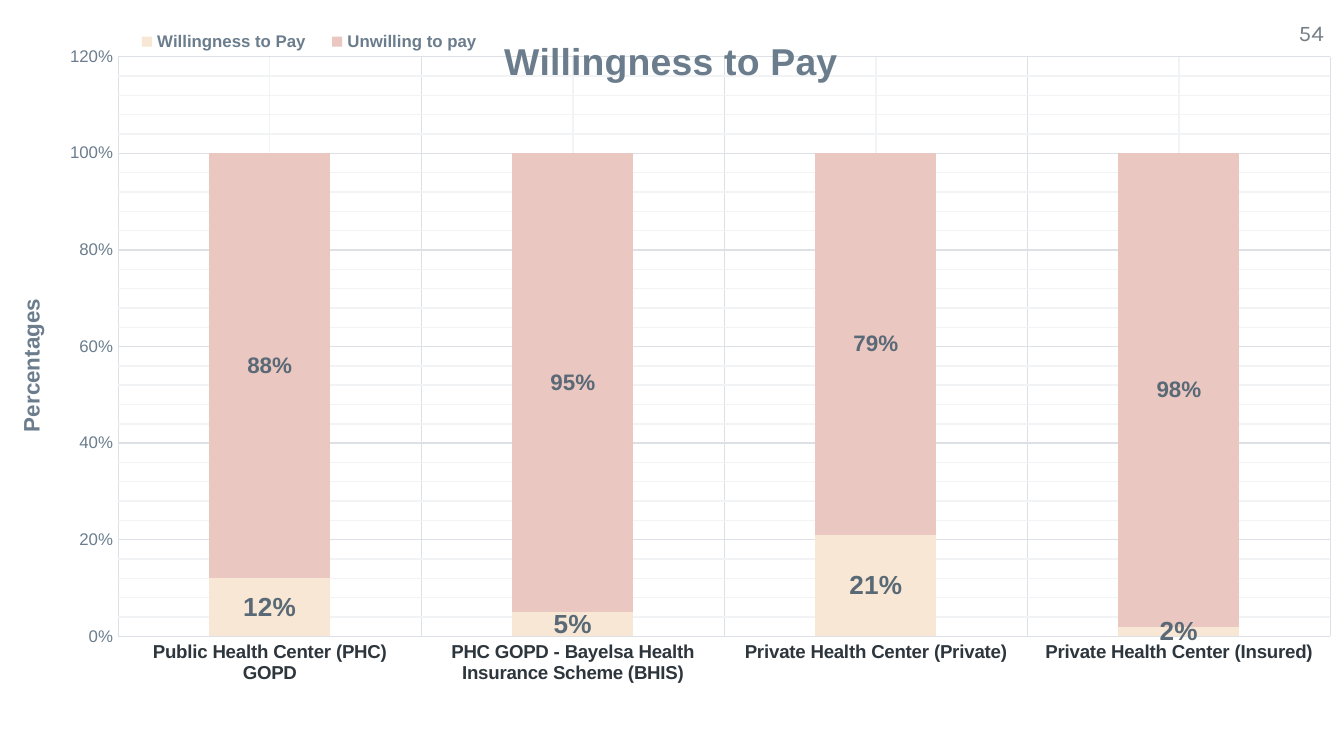
from pptx import Presentation
from pptx.chart.data import CategoryChartData
from pptx.dml.color import RGBColor
from pptx.enum.chart import (XL_CHART_TYPE, XL_LABEL_POSITION,
                             XL_LEGEND_POSITION, XL_TICK_MARK)
from pptx.enum.text import PP_ALIGN
from pptx.oxml import parse_xml
from pptx.oxml.ns import nsdecls, qn
from pptx.util import Pt

INK = RGBColor(0x2E, 0x36, 0x3D)
SLATE = RGBColor(0x6B, 0x7D, 0x8D)
LABEL = RGBColor(0x59, 0x69, 0x76)
NUMBER = RGBColor(0x76, 0x7E, 0x85)
GRID = RGBColor(0xDD, 0xE1, 0xE5)
MINOR_GRID = RGBColor(0xF2, 0xF3, 0xF5)
CREAM = RGBColor(0xF8, 0xE7, 0xD5)
ROSE = RGBColor(0xEB, 0xC7, 0xC1)

WIDTH, HEIGHT = Pt(720), Pt(405)
CATEGORIES = ["Public Health Center (PHC) GOPD",
              "PHC GOPD - Bayelsa Health Insurance Scheme (BHIS)",
              "Private Health Center (Private)",
              "Private Health Center (Insured)"]
# name, values, fill, label size
SERIES = [("Willingness to Pay", [0.12, 0.05, 0.21, 0.02], CREAM, 14),
          ("Unwilling to pay", [0.88, 0.95, 0.79, 0.98], ROSE, 12)]


def style_font(font, size, color, bold=False, name="Arial"):
    font.size = Pt(size)
    font.bold = bold
    font.name = name
    font.color.rgb = color


def write_text(frame, text, align=None, **style):
    para = frame.paragraphs[0]
    para.alignment = align
    span = para.add_run()
    span.text = text
    style_font(span.font, **style)


def add_page_number(page):
    box = page.shapes.add_textbox(Pt(666), Pt(10), Pt(43.2), Pt(31))
    frame = box.text_frame
    frame.word_wrap = True
    frame.margin_left = frame.margin_right = 0
    frame.margin_top = frame.margin_bottom = 0
    write_text(frame, "54", align=PP_ALIGN.RIGHT, size=12, color=NUMBER,
               name="Karla")


def place(element, index, x, y, width=None, height=None, inner=False):
    """Set a manual layout, as fractions of the chart, at a child index."""
    old = element.find(qn("c:layout"))
    if old is not None:
        element.remove(old)
    parts = '<c:layoutTarget val="inner"/>' if inner else ""
    parts += '<c:xMode val="edge"/><c:yMode val="edge"/>'
    for tag, value in zip("xywh", (x, y, width, height)):
        if value is not None:
            parts += f'<c:{tag} val="{value}"/>'
    element.insert(index, parse_xml(
        f'<c:layout {nsdecls("c")}><c:manualLayout>{parts}'
        '</c:manualLayout></c:layout>'))


def style_axis(axis, size, color, bold=False):
    style_font(axis.tick_labels.font, size, color, bold)
    axis.major_tick_mark = axis.minor_tick_mark = XL_TICK_MARK.NONE
    axis.has_major_gridlines = axis.has_minor_gridlines = True
    line = axis.major_gridlines.format.line
    line.color.rgb, line.width = GRID, Pt(0.75)
    minor = axis._element.find(qn("c:minorGridlines"))
    minor.append(parse_xml(
        f'<c:spPr {nsdecls("c", "a")}><a:ln w="{Pt(0.75)}"><a:solidFill>'
        f'<a:srgbClr val="{MINOR_GRID}"/></a:solidFill></a:ln></c:spPr>'))


def style_series(series, fill, size):
    series.format.fill.solid()
    series.format.fill.fore_color.rgb = fill
    labels = series.data_labels
    labels.show_value = True
    labels.position = XL_LABEL_POSITION.CENTER
    labels.number_format = "0%"
    labels.number_format_is_linked = False
    style_font(labels.font, size, LABEL, bold=True)


def style_titles(chart):
    title = chart.chart_title
    write_text(title.text_frame, "Willingness to Pay", size=20, color=SLATE,
               bold=True)
    place(title._element, 1, 0.37, 0.04)
    title._element.find(qn("c:overlay")).set("val", "1")
    axis_title = chart.value_axis.axis_title
    write_text(axis_title.text_frame, "Percentages", size=12, color=SLATE,
               bold=True)
    axis_title.text_frame._txBody.bodyPr.set("rot", "-5400000")
    place(axis_title._element, 1, 0.01, 0.39)


def add_payment_chart(page):
    data = CategoryChartData(number_format="0%")
    data.categories = CATEGORIES
    for name, values, _, _ in SERIES:
        data.add_series(name, values)
    chart = page.shapes.add_chart(XL_CHART_TYPE.COLUMN_STACKED, 0, 0,
                                  WIDTH, HEIGHT, data).chart
    style_font(chart.font, 10, INK)
    plot = chart.plots[0]
    plot.gap_width, plot.overlap = 150, 100
    plot.vary_by_categories = False
    for series, (_, _, fill, size) in zip(plot.series, SERIES):
        style_series(series, fill, size)

    style_axis(chart.category_axis, 10, INK, bold=True)
    chart.category_axis.format.line.color.rgb = GRID
    chart.category_axis.format.line.width = Pt(0.75)
    values = chart.value_axis
    style_axis(values, 9, SLATE)
    values.format.line.fill.background()
    values.minimum_scale, values.maximum_scale = 0, 1.2
    values.major_unit, values.minor_unit = 0.2, 0.04
    values.tick_labels.number_format = "0%"
    values.tick_labels.number_format_is_linked = False
    style_titles(chart)

    chart.has_legend = True
    legend = chart.legend
    legend.position = XL_LEGEND_POSITION.TOP
    legend.include_in_layout = False
    style_font(legend.font, 9, SLATE, bold=True)
    place(legend._element, 1, 0.09, 0.03, 0.28, 0.05)
    place(chart._chartSpace.chart.plotArea, 0, 0.088, 0.075, 0.902, 0.767,
          inner=True)


def main():
    deck = Presentation()
    deck.slide_width, deck.slide_height = WIDTH, HEIGHT
    page = deck.slides.add_slide(deck.slide_layouts[6])
    add_page_number(page)
    add_payment_chart(page)
    deck.save("out.pptx")


if __name__ == "__main__":
    main()
